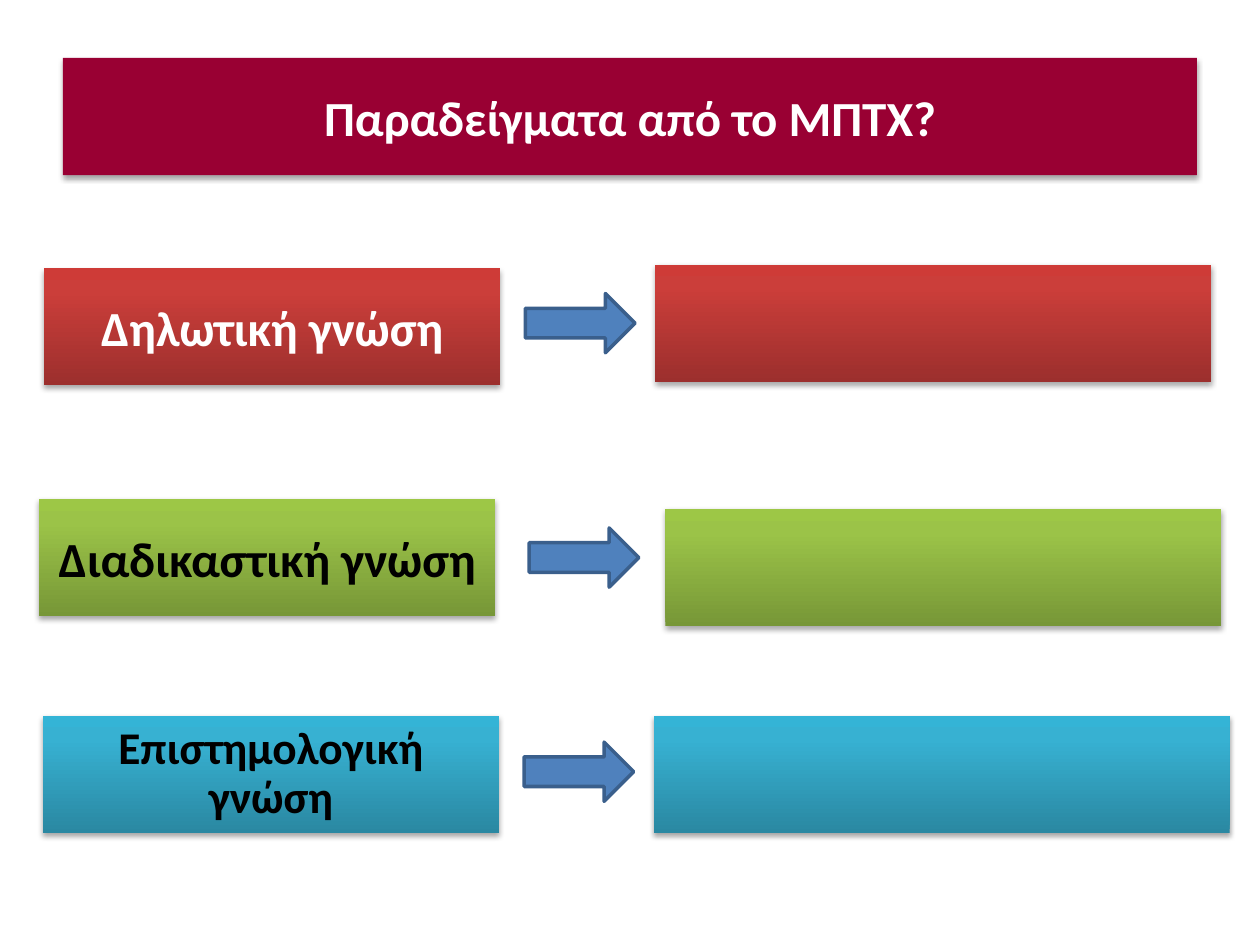
from lxml import etree
from pptx import Presentation
from pptx.dml.color import RGBColor
from pptx.enum.shapes import MSO_SHAPE
from pptx.enum.text import MSO_ANCHOR, PP_ALIGN
from pptx.oxml.ns import qn
from pptx.util import Inches, Pt

RECTANGLE = MSO_SHAPE.RECTANGLE
RIGHT_ARROW = MSO_SHAPE.RIGHT_ARROW
MIDDLE = MSO_ANCHOR.MIDDLE
CENTER = PP_ALIGN.CENTER

BOX_HEIGHT = 0.93
LABEL_WIDTH = 3.62
ARROW_SIZE = (0.87, 0.47)
RED = ("9C2F2D", "CB3E3A", "CE3B37")
GREEN = ("779737", "9BC348", "9DC746")
BLUE = ("2A88A2", "37B1D2", "34B4D6")
STOP_POSITIONS = (0, 80, 100)

KNOWLEDGE_ROWS = [
    {"label": "Δηλωτική γνώση", "shades": RED, "text_color": "FFFFFF",
     "label_at": (0.35, 2.13), "arrow_at": (4.17, 2.33),
     "example_at": (5.2, 2.1), "example_width": 4.41},
    {"label": "Διαδικαστική γνώση", "shades": GREEN, "text_color": "000000",
     "label_at": (0.31, 3.96), "arrow_at": (4.2, 4.19),
     "example_at": (5.28, 4.04), "example_width": 4.41},
    {"label": "Επιστημολογική γνώση", "shades": BLUE, "text_color": "000000",
     "label_at": (0.34, 5.68), "arrow_at": (4.16, 5.89),
     "example_at": (5.19, 5.68), "example_width": 4.57,
     "size": 25.9, "spacing": 0.9},
]


def rgb(color):
    """Turn a hex string into a colour."""
    return RGBColor.from_string(color)


def add_color(parent, color):
    """Add an sRGB colour element and return it."""
    return etree.SubElement(parent, qn("a:srgbClr"), val=color)


def add_soft_shadow(shape):
    """Give a shape a soft shadow falling straight down."""
    shape.shadow.inherit = False
    effects = shape._element.spPr.find(qn("a:effectLst"))
    shadow = etree.SubElement(
        effects, qn("a:outerShdw"), blurRad=str(Pt(3.1)), dist=str(Pt(1.8)),
        dir="5400000", rotWithShape="0")
    etree.SubElement(add_color(shadow, "000000"), qn("a:alpha"), val="35000")


def fill_gradient(shape, shades):
    """Fill a shape with shades running from bottom to top."""
    shape.fill.gradient()
    shape.fill.gradient_angle = 90
    stops = shape._element.spPr.find(qn("a:gradFill")).find(qn("a:gsLst"))
    for stop in list(stops):
        stops.remove(stop)
    for position, shade in zip(STOP_POSITIONS, shades):
        stop = etree.SubElement(stops, qn("a:gs"), pos=str(position * 1000))
        add_color(stop, shade)


def add_box(slide, position, width, shades):
    """Add a borderless shadowed box, plain for one shade or else graded."""
    left, top = position
    box = slide.shapes.add_shape(
        RECTANGLE, Inches(left), Inches(top), Inches(width), Inches(BOX_HEIGHT))
    if len(shades) == 1:
        box.fill.solid()
        box.fill.fore_color.rgb = rgb(shades[0])
    else:
        fill_gradient(box, shades)
    box.line.fill.background()
    add_soft_shadow(box)
    return box


def write_text(box, text, color, size=28, spacing=1.0):
    """Write bold centred text in a box."""
    frame = box.text_frame
    frame.word_wrap = True
    frame.vertical_anchor = MIDDLE
    paragraph = frame.paragraphs[0]
    paragraph.alignment = CENTER
    paragraph.line_spacing = spacing
    run = paragraph.add_run()
    run.text = text
    run.font.name = "Calibri"
    run.font.size = Pt(size)
    run.font.bold = True
    run.font.color.rgb = rgb(color)


def add_arrow(slide, position):
    """Add a block arrow from a label to its example box."""
    left, top = position
    width, height = ARROW_SIZE
    arrow = slide.shapes.add_shape(
        RIGHT_ARROW, Inches(left), Inches(top), Inches(width), Inches(height))
    arrow.shadow.inherit = False
    arrow.fill.solid()
    arrow.fill.fore_color.rgb = rgb("4F81BD")
    arrow.line.color.rgb = rgb("3A5F8C")
    arrow.line.width = Pt(2)


def add_knowledge_row(slide, row):
    """Add a knowledge type, its arrow and its empty example box."""
    add_box(slide, row["example_at"], row["example_width"], row["shades"])
    label = add_box(slide, row["label_at"], LABEL_WIDTH, row["shades"])
    write_text(label, row["label"], row["text_color"],
               row.get("size", 28), row.get("spacing", 1.0))
    add_arrow(slide, row["arrow_at"])


def main():
    """Build the slide and save it."""
    presentation = Presentation()
    presentation.slide_width = Inches(10)
    presentation.slide_height = Inches(7.5)
    slide = presentation.slides.add_slide(presentation.slide_layouts[6])
    title = add_box(slide, (0.5, 0.46), 9, ("990033",))
    write_text(title, "Παραδείγματα από το ΜΠΤΧ?", "FFFFFF")
    for row in KNOWLEDGE_ROWS:
        add_knowledge_row(slide, row)
    presentation.save("out.pptx")


if __name__ == "__main__":
    main()
